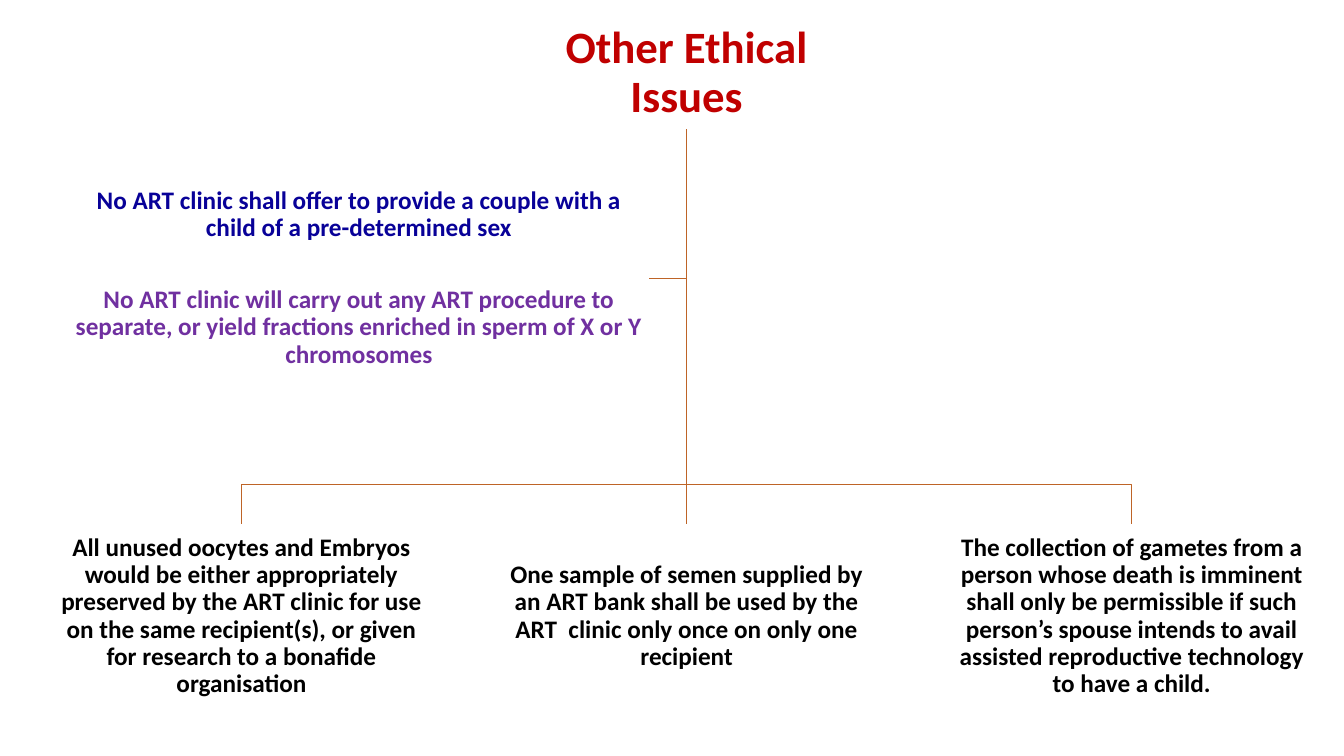
from lxml import etree
from pptx import Presentation
from pptx import util as u
from pptx.dml.color import RGBColor
from pptx.enum import shapes, text
from pptx.oxml.ns import qn

RED = RGBColor(0xC0, 0x00, 0x00)
NAVY = RGBColor(0x08, 0x01, 0x98)
PURPLE = RGBColor(0x70, 0x30, 0xA0)
BLACK = RGBColor(0x00, 0x00, 0x00)
WHITE = RGBColor(0xFF, 0xFF, 0xFF)
BROWN = RGBColor(0xBE, 0x64, 0x27)

# Chart grid, in percent of the slide's width and height
LEFT, COLUMN, PITCH = 4.28, 27.38, 33.12
TITLE_TOP, TITLE_BOTTOM = 2.4, 17.07
BRANCH_Y, RULES_TOP, RULES_HEIGHT = 64.13, 69.33, 24.4


class TreeSlide:
    font = "Calibri"
    line_width = u.Pt(1)

    def __init__(self, prs):
        self.width, self.height = prs.slide_width, prs.slide_height
        self.slide = prs.slides.add_slide(prs.slide_layouts[5])

    def x(self, share):
        return u.Emu(round(self.width * share / 100))

    def y(self, share):
        return u.Emu(round(self.height * share / 100))

    def set_wording(self, shape, paragraphs, size, inset, gap=0):
        """Fill a shape with centred bold paragraphs given as (wording, colour)."""
        frame = shape.text_frame
        frame.word_wrap = True
        frame.auto_size = text.MSO_AUTO_SIZE.NONE
        frame.vertical_anchor = text.MSO_ANCHOR.MIDDLE
        frame.margin_left = frame.margin_right = u.Inches(inset)
        frame.margin_top = frame.margin_bottom = u.Inches(inset)
        frame.text = "\n".join(wording for wording, _ in paragraphs)
        for index, (paragraph, (_, colour)) in enumerate(zip(frame.paragraphs, paragraphs)):
            paragraph.alignment = text.PP_ALIGN.CENTER
            paragraph.line_spacing = 0.9
            paragraph.space_before = u.Pt(gap if index else 0)
            font = paragraph.runs[0].font
            font.name, font.size, font.bold = self.font, u.Pt(size), True
            font.color.rgb = colour

    def title(self, wording, left, top, width, height):
        heading = self.slide.shapes.title
        heading.left, heading.top = self.x(left), self.y(top)
        heading.width, heading.height = self.x(width), self.y(height)
        self.set_wording(heading, [(wording, RED)], 32, 0.02)
        return heading

    def box(self, paragraphs, left, top, width, height, gap=0):
        box = self.slide.shapes.add_shape(
            shapes.MSO_SHAPE.RECTANGLE,
            self.x(left), self.y(top), self.x(width), self.y(height))
        box.shadow.inherit = False
        box.fill.solid()
        box.fill.fore_color.rgb = WHITE
        box.line.fill.background()
        self.set_wording(box, paragraphs, 18, 0.01, gap)
        return box

    def stroke(self, line):
        line.color.rgb = BROWN
        line.width = self.line_width

    def branch(self, *points):
        start, *bends = [(self.x(x), self.y(y)) for x, y in points]
        outline = self.slide.shapes.build_freeform(*start)
        outline.add_line_segments(bends, close=False)
        branch = outline.convert_to_shape()
        branch.shadow.inherit = False
        branch.fill.background()
        self.stroke(branch.line)

    def trunk(self, parent, child):
        trunk = self.slide.shapes.add_connector(
            shapes.MSO_CONNECTOR.STRAIGHT, 0, 0, 0, 0)
        trunk.begin_connect(parent, 2)
        trunk.end_connect(child, 0)
        self.stroke(trunk.line)
        etree.SubElement(trunk._element.spPr, qn("a:effectLst"))


def main():
    prs = Presentation()
    prs.slide_width, prs.slide_height = u.Inches(13.33), u.Inches(7.5)
    tree = TreeSlide(prs)

    # Title above the middle column
    issues = tree.title("Other Ethical Issues", LEFT + PITCH, TITLE_TOP,
                        COLUMN, TITLE_BOTTOM - TITLE_TOP)

    # Three rules along the bottom
    rules = [
        "All unused oocytes and Embryos would be either appropriately preserved "
        "by the ART clinic for use on the same recipient(s), or given for "
        "research to a bonafide organisation",
        "One sample of semen supplied by an ART bank shall be used by the "
        "ART  clinic only once on only one recipient",
        "The collection of gametes from a person whose death is imminent shall "
        "only be permissible if such person’s spouse intends to avail assisted "
        "reproductive technology to have a child.",
    ]
    preservation, sample, gametes = [
        tree.box([(rule, BLACK)], LEFT + column * PITCH, RULES_TOP, COLUMN, RULES_HEIGHT)
        for column, rule in enumerate(rules)]

    # Sex selection rules beside the trunk
    sex_left, sex_top, sex_width, sex_height = 5.1, 22.4, 43.21, 28.8
    tree.box([
        ("No ART clinic shall offer to provide a couple with a child of a "
         "pre-determined sex", NAVY),
        ("No ART clinic will carry out any ART procedure to separate, or yield "
         "fractions enriched in sperm of X or Y chromosomes", PURPLE),
    ], sex_left, sex_top, sex_width, sex_height, gap=32)

    # Branches from the title to each box
    middle = LEFT + PITCH + COLUMN / 2
    root = (middle, TITLE_BOTTOM)
    sex_middle = sex_top + sex_height / 2
    tree.branch(root, (middle, sex_middle), (sex_left + sex_width, sex_middle))
    for end in (middle - PITCH, middle + PITCH):
        tree.branch(root, (middle, BRANCH_Y), (end, BRANCH_Y), (end, RULES_TOP))
    tree.trunk(issues, sample)

    prs.save("out.pptx")


if __name__ == "__main__":
    main()
